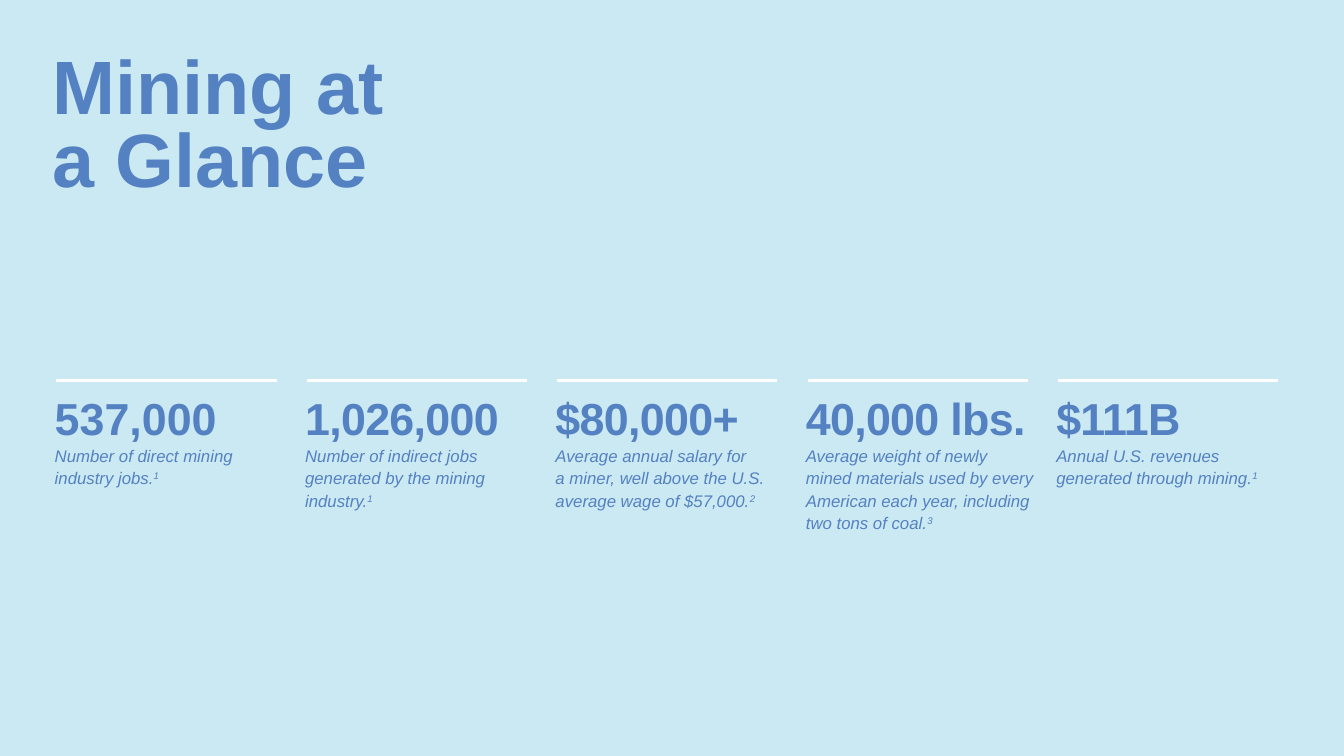
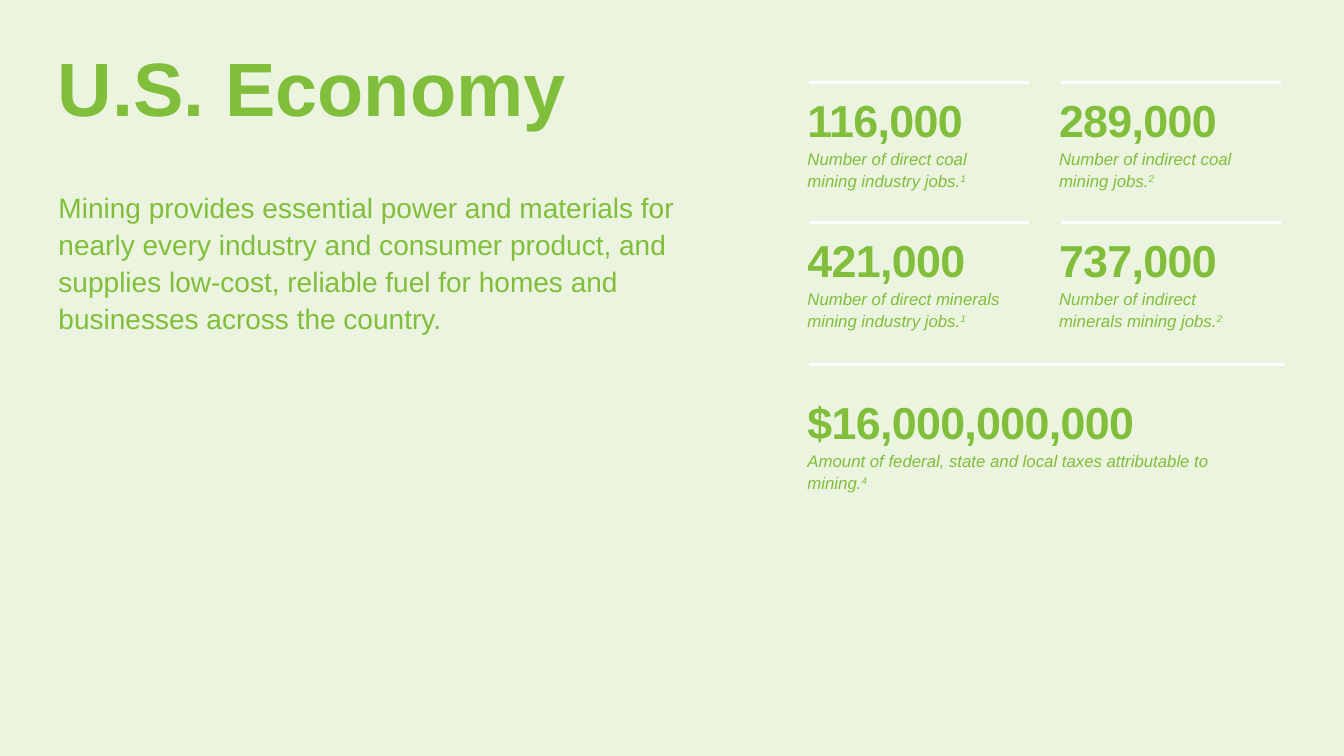
from dataclasses import dataclass

from lxml import etree
from pptx import Presentation
from pptx.dml.color import RGBColor
from pptx.enum.shapes import MSO_CONNECTOR
from pptx.enum.text import MSO_ANCHOR, MSO_AUTO_SIZE, PP_ALIGN
from pptx.oxml.ns import qn
from pptx.util import Cm, Pt

STRAIGHT = MSO_CONNECTOR.STRAIGHT
TOP = MSO_ANCHOR.TOP
LEFT = PP_ALIGN.LEFT
FIXED = MSO_AUTO_SIZE.NONE
GROW = MSO_AUTO_SIZE.SHAPE_TO_FIT_TEXT

WHITE = RGBColor(0xFF, 0xFF, 0xFF)
BLUE = RGBColor(0x54, 0x81, 0xC1)
SKY = RGBColor(0xCB, 0xE9, 0xF2)
GREEN = RGBColor(0x80, 0xBE, 0x3B)
MINT = RGBColor(0xEB, 0xF4, 0xDE)

FONT = "Arial"
TITLE_ONLY, TITLE_BODY = 5, 1
RULE = Cm(5.55)
INSET = Cm(0.29)
DROP = Cm(0.13)


@dataclass
class Stat:
    value: str
    label: str
    note: str
    width: float = 5.5
    height: float = 2.74
    track: int = -50


GLANCE = [
    Stat("537,000", "Number of direct mining industry jobs.", "1", 5.77, track=0),
    Stat("1,026,000",
         "Number of indirect jobs generated by the mining industry.", "1",
         5.94, 3.3),
    Stat("$80,000+",
         "Average annual salary for\va miner, well above the U.S. "
         "average wage of $57,000.", "2", 5.94, 3.3),
    Stat("40,000 lbs.",
         "Average weight of newly\vmined materials used by every "
         "American each year, including two tons of coal.", "3", 6.53, 3.86),
    Stat("$111B", "Annual U.S. revenues generated through mining.", "1", 6.53),
]
JOBS = [
    Stat("116,000", "Number of direct coal mining industry jobs.", "1"),
    Stat("289,000", "Number of indirect coal mining jobs.", "2"),
    Stat("421,000", "Number of direct minerals mining industry jobs.", "1"),
    Stat("737,000", "Number of indirect minerals mining jobs.", "2"),
]
TAXES = Stat(
    "$16,000,000,000",
    "Amount of federal, state and local taxes attributable to mining.", "4",
    11.76)
INTRO = (
    "Mining provides essential power and materials for nearly every industry "
    "and consumer product, and supplies low-cost, reliable fuel for homes and "
    "businesses across the country.")


def style(para, size, color, bold=False, italic=False, space=1.0):
    para.alignment = LEFT
    para.line_spacing = space
    para.space_before = Pt(0)
    for run in para.runs:
        font = run.font
        font.name, font.size = FONT, Pt(size)
        font.bold, font.italic = bold, italic
        font.color.rgb = color


def fill_holder(holder, box, text):
    """Move a placeholder to box, set its text and return the paragraph."""
    holder.left, holder.top, holder.width, holder.height = box
    frame = holder.text_frame
    frame.text = text
    frame.word_wrap = True
    frame.auto_size = FIXED
    frame.vertical_anchor = TOP
    return frame.paragraphs[0]


def add_page(deck, layout, back, color, title, box):
    slide = deck.slides.add_slide(deck.slide_layouts[layout])
    fill = slide.background.fill
    fill.solid()
    fill.fore_color.rgb = back
    para = fill_holder(slide.shapes.title, box, title)
    style(para, 54, color, bold=True, space=0.8)
    return slide


def add_body(slide, box, text, color):
    para = fill_holder(slide.placeholders[1], box, text)
    style(para, 20, color, space=1.1)
    props = para._p.get_or_add_pPr()
    props.set("marL", "0")
    props.set("indent", "0")
    etree.SubElement(props, qn("a:buNone"))


def add_rule(slide, left, top, width):
    line = slide.shapes.add_connector(STRAIGHT, left, top, left + width, top)
    line.line.color.rgb = WHITE
    line.line.width = Pt(2.25)
    etree.SubElement(line._element.spPr, qn("a:effectLst"))


def add_stat(slide, left, top, stat, color, rule=RULE, drop=DROP):
    """Place a rule at left, top with the figure and its label below."""
    add_rule(slide, left, top, rule)
    box = slide.shapes.add_textbox(
        left - INSET, top + drop, Cm(stat.width), Cm(stat.height))
    frame = box.text_frame
    frame.word_wrap = True
    frame.auto_size = GROW
    frame.text = stat.value
    value = frame.paragraphs[0]
    style(value, 32, color, bold=True)
    value.runs[0]._r.get_or_add_rPr().set("spc", str(stat.track))
    label = frame.add_paragraph()
    label.text = stat.label
    note = label.add_run()
    note.text = stat.note
    style(label, 12, color, italic=True, space=1.1)
    note._r.get_or_add_rPr().set("baseline", "30000")


def add_grid(slide, left, top, stats, cols, step, color):
    across, down = step
    for i, stat in enumerate(stats):
        row, col = divmod(i, cols)
        add_stat(slide, left + col * across, top + row * down, stat, color)


def glance(deck):
    box = Cm(1.07), Cm(1.3), Cm(11.23), Cm(4.04)
    slide = add_page(deck, TITLE_ONLY, SKY, BLUE, "Mining at\va Glance", box)
    add_grid(slide, Cm(1.42), Cm(9.58), GLANCE, 5, (Cm(6.31), 0), BLUE)


def economy(deck):
    box = Cm(1.2), Cm(1.35), Cm(19.15), Cm(2.18)
    slide = add_page(deck, TITLE_BODY, MINT, GREEN, "U.S. Economy", box)
    add_body(slide, (Cm(1.22), Cm(4.6), Cm(17.8), Cm(4.01)), INTRO, GREEN)
    left = Cm(20.39)
    add_grid(slide, left, Cm(2.08), JOBS, 2, (Cm(6.34), Cm(3.53)), GREEN)
    add_stat(slide, left, Cm(9.19), TAXES, GREEN, Cm(11.96), Cm(0.64))


def main():
    deck = Presentation()
    deck.slide_width, deck.slide_height = Cm(33.87), Cm(19.05)
    glance(deck)
    economy(deck)
    deck.save("out.pptx")


if __name__ == "__main__":
    main()
